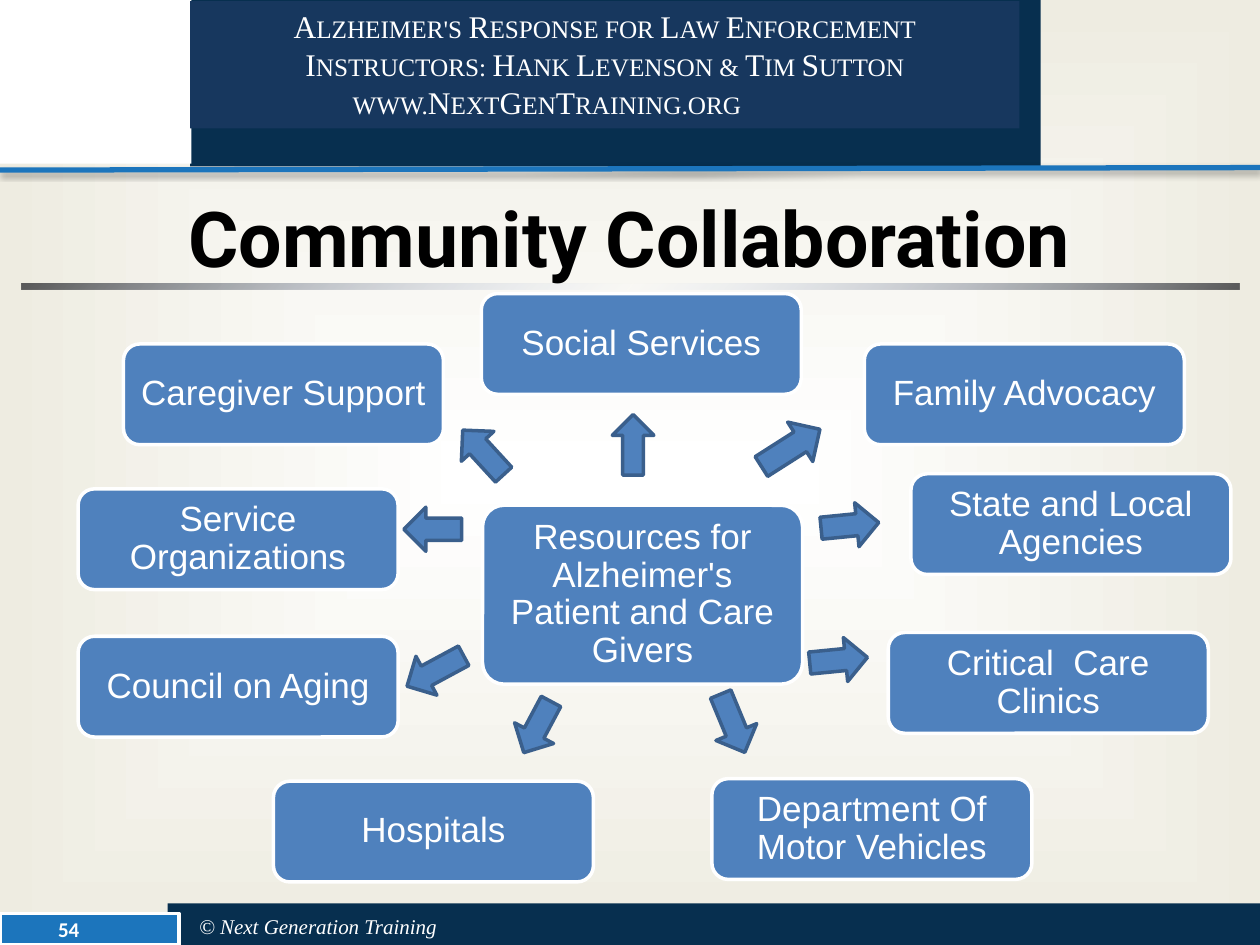
import pptx
import pptx.dml.color
import pptx.enum.shapes
import pptx.enum.text
import pptx.oxml
import pptx.oxml.ns
import pptx.util

Inches = pptx.util.Inches
SHAPES = pptx.enum.shapes.MSO_SHAPE
ALIGN = pptx.enum.text.PP_ALIGN
ANCHOR = pptx.enum.text.MSO_ANCHOR

COLORS = {"navy": "072F4F", "banner": "17375E", "blue": "1C75BC", "white": "FFFFFF",
          "black": "000000", "cream": "EEECE1", "gray": "595959", "pale": "C2D1ED",
          "node": "4F81BD", "arrow_edge": "3A5F8C"}

# Content
TITLE = "Community Collaboration"
HEADER = ["Alzheimer's Response for Law Enforcement",
          "Instructors: Hank Levenson & Tim Sutton",
          "www.NextGenTraining.org"]
COPYRIGHT = "© Next Generation Training"
PAGE_NUMBER = "54"
HUB = ("Resources for Alzheimer's Patient and Care Givers", 3.83, 4.01)
RESOURCES = [  # text, left, top
    ("Social Services", 3.82, 2.33),
    ("Family Advocacy", 6.86, 2.73),
    ("State and Local Agencies", 7.23, 3.76),
    ("Critical  Care Clinics", 7.05, 5.02),
    ("Department Of Motor Vehicles", 5.65, 6.18),
    ("Hospitals", 2.17, 6.2),
    ("Council on Aging", 0.62, 5.05),
    ("Service Organizations", 0.62, 3.88),
    ("Caregiver Support", 0.98, 2.73),
]
ARROWS = [  # left, top, width, height, rotation
    (4.86, 3.29, 0.33, 0.48, 0),
    (6.09, 3.28, 0.37, 0.55, 57.5),
    (6.57, 3.94, 0.35, 0.46, 84.4),
    (6.48, 5.01, 0.35, 0.46, 84.4),
    (5.64, 5.49, 0.35, 0.5, 157.5),
    (4.09, 5.54, 0.35, 0.46, 208),
    (3.28, 5.07, 0.35, 0.51, 241.7),
    (3.26, 3.97, 0.35, 0.46, 270),
    (3.66, 3.35, 0.35, 0.48, 317.4),
]
BANDS = [  # left, top, width, height, fill, outline
    (1.51, 0, 6.75, 1.32, "navy", None),
    (0, 0, 1.52, 1.3, "white", None),
    (1.33, 7.17, 8.67, 0.33, "navy", None),
    (0, 7.25, 1.42, 0.25, "blue", "white"),
]
NODE_WIDTH, NODE_HEIGHT, HUB_HEIGHT = 2.54, 0.8, 1.42


def rgb(name):
    return pptx.dml.color.RGBColor.from_string(COLORS[name])


def add_block(page, area, fill, outline=None, kind=SHAPES.RECTANGLE):
    block = page.shapes.add_shape(kind, *map(Inches, area))
    block.shadow.inherit = False
    block.fill.solid()
    block.fill.fore_color.rgb = rgb(fill)
    if outline:
        block.line.color.rgb = rgb(outline)
        block.line.width = pptx.util.Pt(2)
    else:
        block.line.fill.background()
    return block


def write(box, lines, color, align=ALIGN.CENTER, anchor=ANCHOR.MIDDLE, inset=None,
          spacing=None, **font):
    frame = box.text_frame
    frame.word_wrap = True
    frame.vertical_anchor = anchor
    if inset is not None:
        for side in ("left", "top", "right", "bottom"):
            setattr(frame, f"margin_{side}", Inches(inset))
    for index, line in enumerate(lines):
        para = frame.paragraphs[0] if index == 0 else frame.add_paragraph()
        para.alignment = align
        para.line_spacing = spacing
        span = para.add_run()
        span.text = line
        span.font.color.rgb = rgb(color)
        for name, value in font.items():
            setattr(span.font, name, value)
    return frame


def set_gradient(owner, stops, direction):
    """Give the owner's gradient these (position, colour, alpha) stops."""
    owner.fill.gradient()
    stop_xml = "".join(
        f'<a:gs pos="{position * 1000}"><a:srgbClr val="{COLORS[color]}">'
        f'<a:alpha val="{alpha * 1000}"/></a:srgbClr></a:gs>'
        for position, color, alpha in stops)
    return pptx.oxml.parse_xml(
        f'<a:gradFill {pptx.oxml.ns.nsdecls("a")} rotWithShape="1">'
        f'<a:gsLst>{stop_xml}</a:gsLst>{direction}</a:gradFill>')


def swap_gradient(element, gradient):
    old = next(element.iter(pptx.oxml.ns.qn("a:gradFill")))
    old.getparent().replace(old, gradient)


def add_frame(page):
    """Background, bands, rules, header and footer."""
    swap_gradient(page.element, set_gradient(
        page.background, [(0, "white", 100), (100, "cream", 100)],
        '<a:path path="shape"><a:fillToRect l="50000" t="50000" r="50000" b="50000"/></a:path>'))
    for *area, fill, outline in BANDS:
        add_block(page, area, fill, outline)

    # Rule under the title
    rule = add_block(page, (0.17, 2.25, 9.67, 0.05), "gray")
    swap_gradient(rule.element, set_gradient(
        rule, [(0, "gray", 100), (50, "pale", 0), (100, "gray", 100)],
        '<a:lin ang="2700000" scaled="1"/>'))

    # Rule under the header, with its soft shadow
    line = page.shapes.add_connector(pptx.enum.shapes.MSO_CONNECTOR.STRAIGHT,
                                     *map(Inches, (0, 1.35, 10, 1.33)))
    line.line.color.rgb = rgb("blue")
    line.line.width = pptx.util.Pt(3)
    line.element.spPr.append(pptx.oxml.parse_xml(
        f'<a:effectLst {pptx.oxml.ns.nsdecls("a")}>'
        '<a:outerShdw blurRad="39370" dist="22860" dir="5400000" rotWithShape="0">'
        f'<a:srgbClr val="{COLORS["black"]}"><a:alpha val="35000"/></a:srgbClr>'
        '</a:outerShdw></a:effectLst>'))

    # Header text: the web address is set off to the left
    banner = add_block(page, (1.51, 0.01, 6.58, 1.01), "banner")
    frame = write(banner, HEADER, "white", anchor=ANCHOR.TOP,
                  name="Times New Roman", size=pptx.util.Pt(18))
    for para in frame.paragraphs:
        para.runs[0].font._element.set("cap", "small")
    address = frame.paragraphs[-1]
    address.alignment = ALIGN.LEFT
    address._p.get_or_add_pPr().set("marL", str(Inches(1.19)))

    # Footer
    footer = page.shapes.add_textbox(*map(Inches, (1.58, 7.25, 8.17, 0.2)))
    write(footer, [COPYRIGHT], "white", align=ALIGN.LEFT, inset=0,
          name="Times New Roman", size=pptx.util.Pt(12), italic=True)
    number = page.shapes.add_textbox(*map(Inches, (0, 7.25, 1.09, 0.25)))
    write(number, [PAGE_NUMBER], "white",
          name="Calibri", size=pptx.util.Pt(12), bold=True)


def add_node(page, text, left, top, height=NODE_HEIGHT):
    node = add_block(page, (left, top, NODE_WIDTH, height), "node", "white",
                     SHAPES.ROUNDED_RECTANGLE)
    node.adjustments[0] = 0.13 / NODE_HEIGHT if height == NODE_HEIGHT else 0.12
    write(node, [text], "white", inset=0.05, spacing=0.9,
          name="Arial", size=pptx.util.Pt(20))


def main():
    deck = pptx.Presentation()
    deck.slide_width, deck.slide_height = Inches(10), Inches(7.5)
    page = deck.slides.add_slide(deck.slide_layouts[5])
    add_frame(page)

    # Title
    title = page.shapes.title
    for name, value in {"left": 0.86, "top": 1.46, "width": 8.28, "height": 0.84}.items():
        setattr(title, name, Inches(value))
    write(title, [TITLE], "black", anchor=ANCHOR.TOP,
          name="Roboto", size=pptx.util.Pt(44), bold=True)

    # Hub, resources and arrows
    for resource in RESOURCES:
        add_node(page, *resource)
    add_node(page, *HUB, height=HUB_HEIGHT)
    for *area, rotation in ARROWS:
        arrow = add_block(page, area, "node", "arrow_edge", SHAPES.UP_ARROW)
        arrow.rotation = rotation

    deck.save("out.pptx")


if __name__ == "__main__":
    main()
